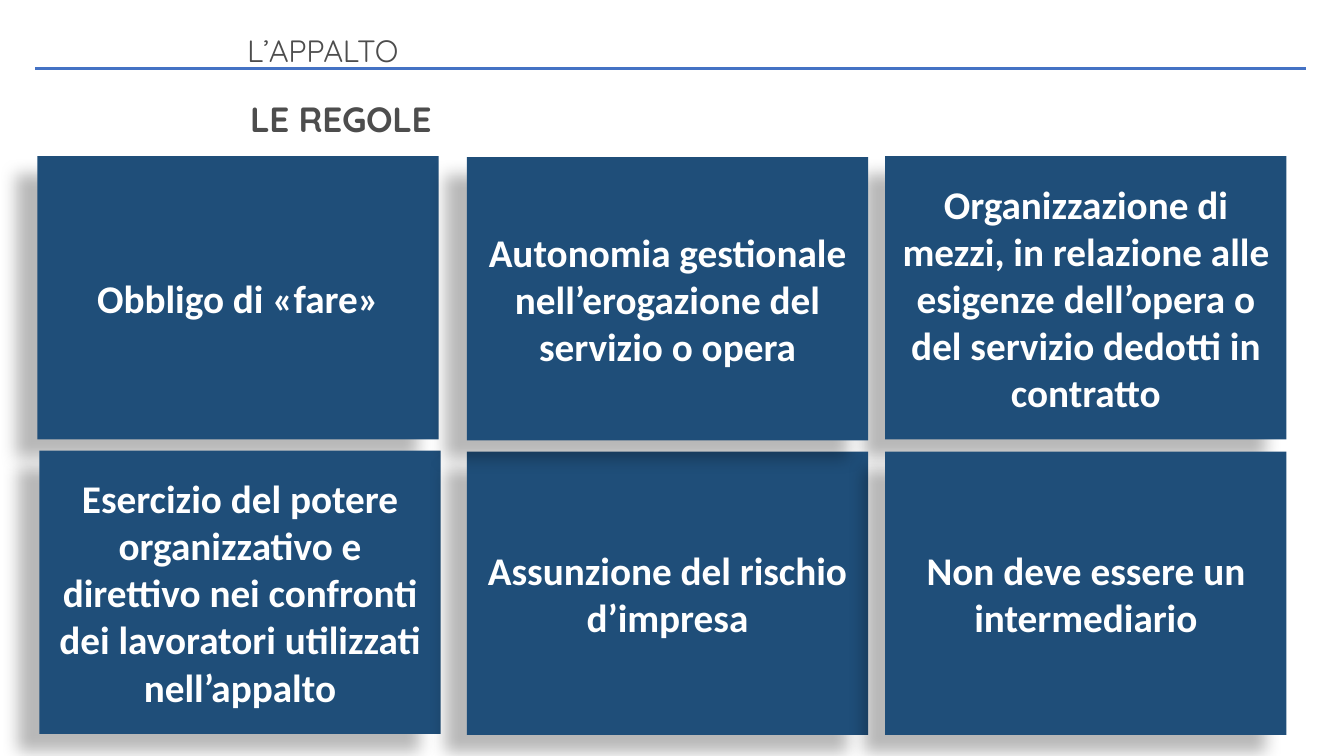
from lxml import etree
from pptx import Presentation
from pptx.dml.color import RGBColor
from pptx.enum import shapes, text
from pptx.oxml import ns
from pptx.util import Inches, Pt

COLORS = {"rule": "4472C4", "heading": "4D4D4D", "card": "1F4E79",
          "card_text": "FFFFFF", "shadow": "000000"}
CARD_SIZE = (3.98, 2.81)
RULES = [
    (0.37, 1.55, "Obbligo di «fare»"),
    (0.39, 4.47, "Esercizio del potere organizzativo e direttivo nei confronti "
                 "dei lavoratori utilizzati nell’appalto"),
    (8.78, 1.55, "Organizzazione di mezzi, in relazione alle esigenze dell’opera o "
                 "del servizio dedotti in contratto"),
    (4.63, 4.48, "Assunzione del rischio d’impresa"),
    (4.63, 1.56, "Autonomia gestionale nell’erogazione del servizio o opera"),
    (8.78, 4.48, "Non deve essere un intermediario"),
]


def color(name):
    return RGBColor.from_string(COLORS[name])


def write(holder, words, *, size, font, ink, bold=False, align=text.PP_ALIGN.LEFT,
          anchor=text.MSO_ANCHOR.TOP, line_spacing=1.0, tracking=None):
    frame = holder.text_frame
    frame.word_wrap = True
    frame.auto_size = text.MSO_AUTO_SIZE.NONE
    frame.vertical_anchor = anchor
    paragraph = frame.paragraphs[0]
    paragraph.alignment = align
    paragraph.line_spacing = line_spacing
    paragraph.space_before = Pt(0)
    run = paragraph.add_run()
    run.text = words
    run.font.name = font
    run.font.size = Pt(size)
    run.font.bold = bold
    run.font.color.rgb = color(ink)
    if tracking is not None:
        run.font._element.set("spc", str(round(tracking * 100)))


def add_effects(properties, shadow=False):
    effects = etree.SubElement(properties, ns.qn("a:effectLst"))
    if shadow:
        outer = etree.SubElement(effects, ns.qn("a:outerShdw"), blurRad=str(Pt(11.8)),
                                 dist=str(Pt(19.7)), dir=str(141 * 60000),
                                 algn="tr", rotWithShape="0")
        tint = etree.SubElement(outer, ns.qn("a:srgbClr"), val=COLORS["shadow"])
        etree.SubElement(tint, ns.qn("a:alpha"), val="28000")


def place_heading(holder, box, words, size, bold=False):
    holder.left, holder.top, holder.width, holder.height = map(Inches, box)
    write(holder, words, size=size, font="Quicksand", ink="heading", bold=bold,
          line_spacing=0.9, tracking=-0.2)


def add_header_rule(slide, left, right, top):
    rule = slide.shapes.add_connector(shapes.MSO_CONNECTOR.STRAIGHT, Inches(left),
                                      Inches(top), Inches(right), Inches(top))
    rule.line.color.rgb = color("rule")
    rule.line.width = Pt(2.25)
    add_effects(rule._element.spPr)


def add_rule_card(slide, box, words):
    card = slide.shapes.add_shape(shapes.MSO_SHAPE.RECTANGLE, *map(Inches, box))
    card.fill.solid()
    card.fill.fore_color.rgb = color("card")
    card.line.fill.background()
    add_effects(card._element.spPr, shadow=True)
    write(card, words, size=28, font="Calibri", ink="card_text", bold=True,
          align=text.PP_ALIGN.CENTER, anchor=text.MSO_ANCHOR.MIDDLE)


def main():
    deck = Presentation()
    deck.slide_width, deck.slide_height = Inches(13.33), Inches(7.5)
    slide = deck.slides.add_slide(deck.slide_layouts.get_by_name("Section Header"))
    add_header_rule(slide, 0.35, 12.95, 0.68)
    place_heading(slide.shapes.title, (2.35, 0.31, 8.64, 0.33), "L’APPALTO", 22)
    place_heading(slide.placeholders[1], (2.38, 0.96, 8.64, 0.33), "LE REGOLE", 25, bold=True)
    for left, top, words in RULES:
        add_rule_card(slide, (left, top, *CARD_SIZE), words)
    deck.save("out.pptx")


if __name__ == "__main__":
    main()
